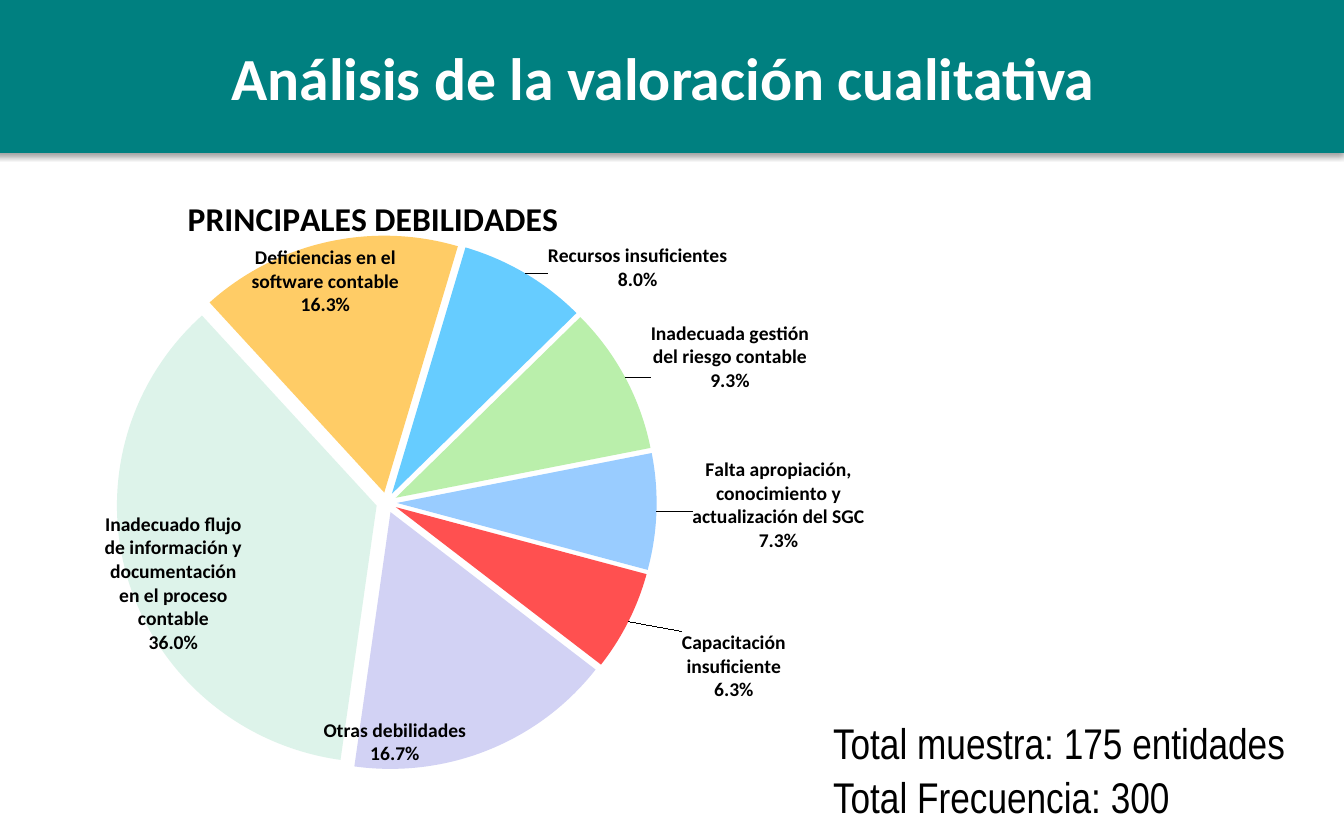
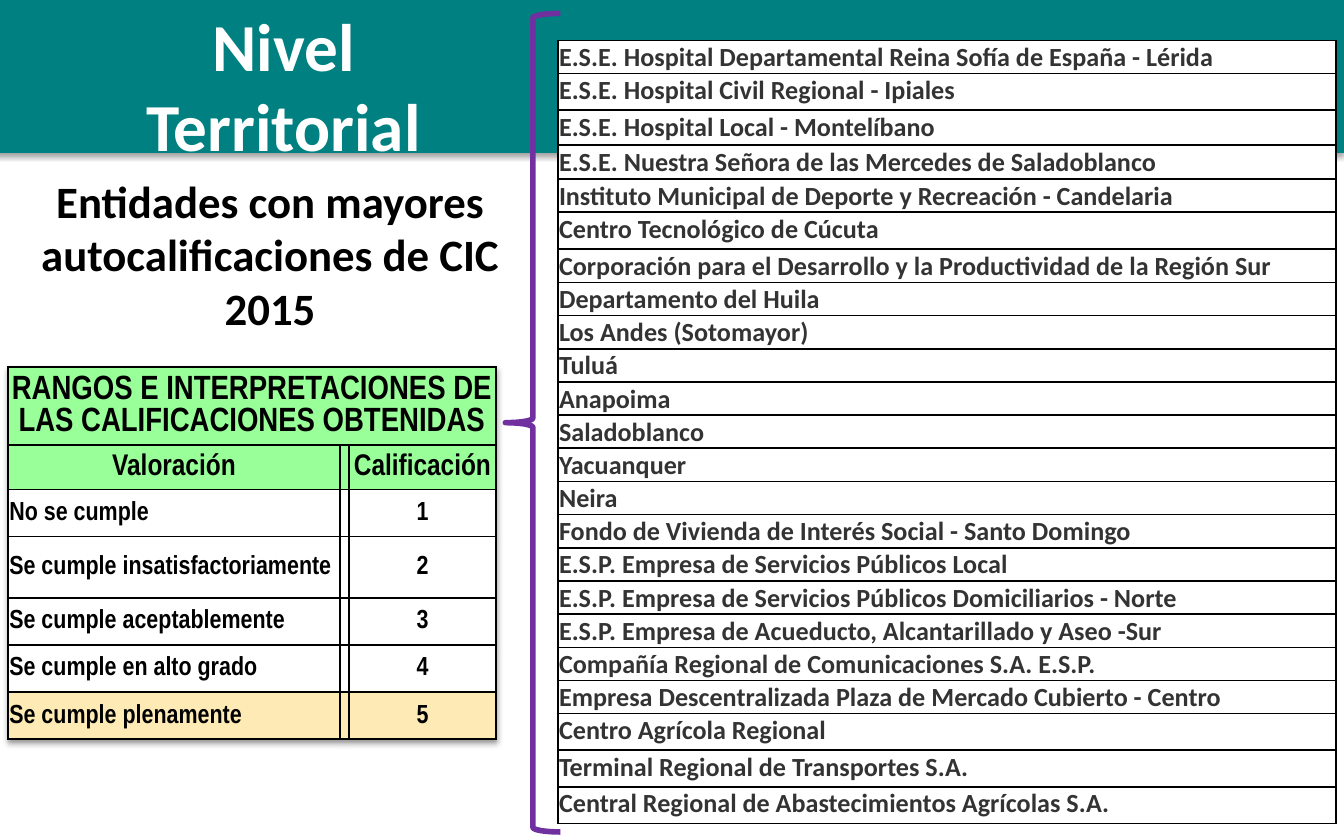
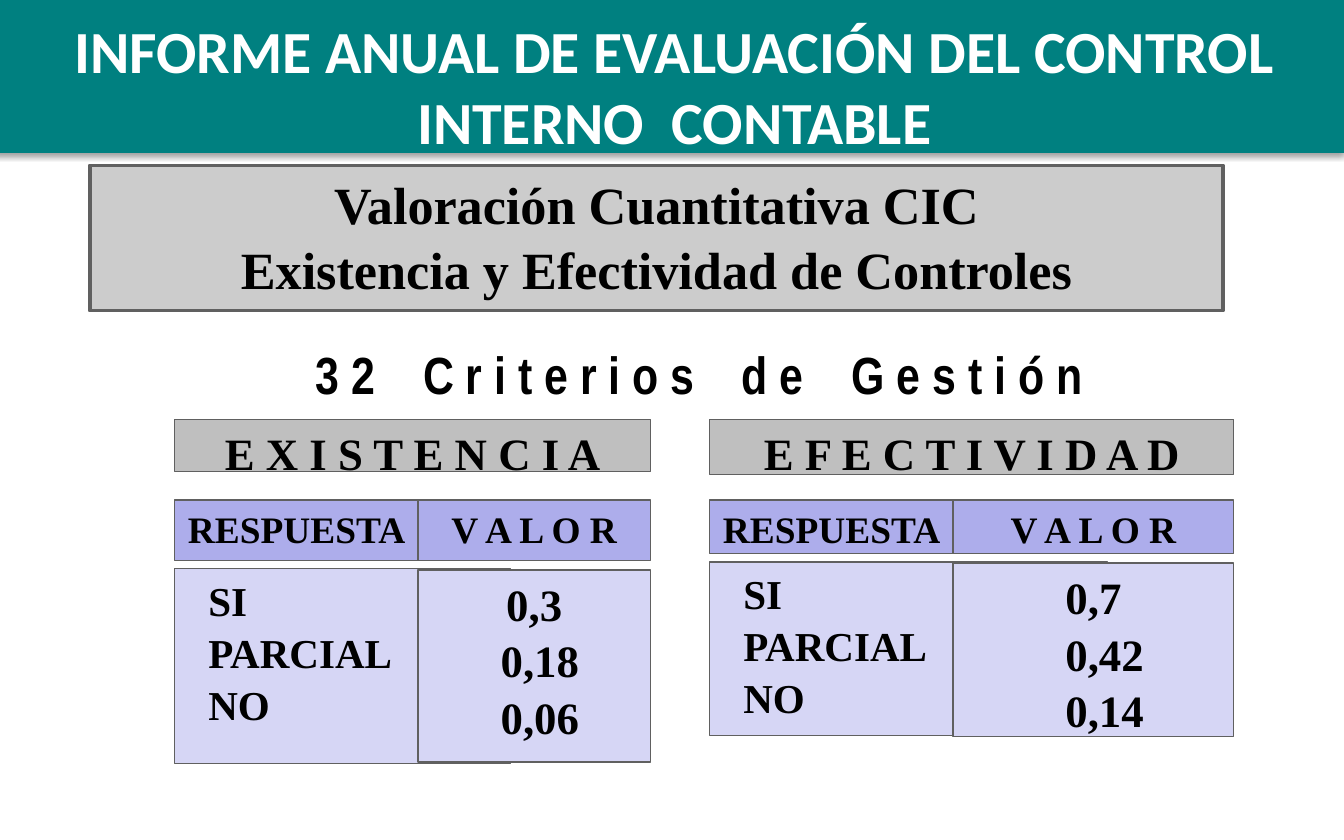
from copy import deepcopy
from dataclasses import dataclass

from pptx import Presentation
from pptx.chart.data import CategoryChartData
from pptx.dml.color import RGBColor
from pptx.enum.chart import XL_CHART_TYPE, XL_LABEL_POSITION
from pptx.enum.shapes import MSO_SHAPE
from pptx.enum.text import MSO_ANCHOR, MSO_AUTO_SIZE, PP_ALIGN
from pptx.oxml import parse_xml
from pptx.oxml.ns import nsdecls, qn
from pptx.util import Pt

LEFT, CENTER, JUSTIFY = PP_ALIGN.LEFT, PP_ALIGN.CENTER, PP_ALIGN.JUSTIFY
TOP, MIDDLE = MSO_ANCHOR.TOP, MSO_ANCHOR.MIDDLE
RECTANGLE, LEFT_BRACE = MSO_SHAPE.RECTANGLE, MSO_SHAPE.LEFT_BRACE
TITLE_ONLY = 5


@dataclass(frozen=True)
class Theme:
    sans: str = "Calibri"
    narrow: str = "Arial Narrow"
    serif: str = "Times New Roman"
    black: str = "000000"
    white: str = "FFFFFF"
    ink: str = "333333"
    band: str = "008080"
    brace: str = "7030A0"
    outline: str = "606060"
    banner: str = "CCCCCC"
    heading: str = "BFBFBF"
    column: str = "ADADEB"
    body: str = "D6D6F5"
    scale_head: str = "99FF99"
    scale_best: str = "FDEAB5"
    title_size: float = 32
    tall_title_size: float = 36
    banner_size: float = 28
    value_size: float = 24
    total_size: float = 23
    answer_size: float = 22
    column_size: float = 20
    caption_size: float = 18
    scale_column_size: float = 16
    cell_size: float = 14
    label_size: float = 10.5


THEME = Theme()

WEAKNESSES = [
    # category, share, slice colour, label shift as a fraction of the chart
    ("Inadecuado flujo de información y documentación en el proceso contable",
     36, "DDF3EA", (0.13, -0.11)),
    ("Deficiencias en el software contable", 16.3, "FFCC66", (0.08, 0.13)),
    ("Recursos insuficientes", 8, "66CCFF", (0.02, 0.04)),
    ("Inadecuada gestión del riesgo contable", 9.3, "BAEFAB", (0.02, 0.03)),
    ("Falta apropiación, conocimiento y actualización del SGC",
     7.3, "99CCFF", (0.03, -0.01)),
    ("Capacitación insuficiente", 6.3, "FF5050", (0.05, 0.01)),
    ("Otras debilidades", 16.7, "D2D2F4", (-0.18, -0.06)),
]

ENTITIES = [
    "E.S.E. Hospital Departamental Reina Sofía de España - Lérida",
    "E.S.E. Hospital Civil Regional - Ipiales",
    "E.S.E. Hospital Local - Montelíbano",
    "E.S.E. Nuestra Señora de las Mercedes de Saladoblanco",
    "Instituto Municipal de Deporte y Recreación - Candelaria",
    "Centro Tecnológico de Cúcuta",
    "Corporación para el Desarrollo y la Productividad de la Región Sur",
    "Departamento del Huila",
    "Los Andes (Sotomayor)",
    "Tuluá",
    "Anapoima",
    "Saladoblanco",
    "Yacuanquer",
    "Neira",
    "Fondo de Vivienda de Interés Social - Santo Domingo",
    "E.S.P. Empresa de Servicios Públicos Local",
    "E.S.P. Empresa de Servicios Públicos Domiciliarios - Norte",
    "E.S.P. Empresa de Acueducto, Alcantarillado y Aseo -Sur",
    "Compañía Regional de Comunicaciones S.A. E.S.P.",
    "Empresa Descentralizada Plaza de Mercado Cubierto - Centro",
    "Centro Agrícola Regional",
    "Terminal Regional de Transportes S.A.",
    "Central Regional de Abastecimientos Agrícolas S.A.",
]
ENTITY_ROW = 17.8
TALL_ENTITY_ROWS = {1: 19.6, 2: 18.8, 3: 18.2, 5: 19.8, 20: 19.6, 21: 19.6, 22: 19.6}

RATINGS = ["No se cumple", "Se cumple insatisfactoriamente", "Se cumple aceptablemente",
           "Se cumple en alto grado", "Se cumple plenamente"]


def color(value):
    return RGBColor.from_string(value)


def shadow_effect():
    return parse_xml(
        f'<a:effectLst {nsdecls("a")}><a:outerShdw blurRad="{Pt(3.1)}" dist="{Pt(1.6)}" '
        f'dir="5400000" algn="t" rotWithShape="0"><a:srgbClr val="{THEME.black}">'
        '<a:alpha val="38000"/></a:srgbClr></a:outerShdw></a:effectLst>')


def style_font(font, size, name, ink=THEME.black, bold=True):
    font.size, font.name, font.bold = Pt(size), name, bold
    font.color.rgb = color(ink)


def write(frame, lines, size, name, ink=THEME.black, bold=True, align=LEFT, later_indent=0):
    """Fill a text frame; later_indent shifts every line after the first."""
    frame.word_wrap = True
    for index, line in enumerate(lines):
        paragraph = frame.paragraphs[0] if index == 0 else frame.add_paragraph()
        paragraph.alignment = align
        if index and name != THEME.sans:
            paragraph.space_before = Pt(1.5)
        if index and later_indent:
            paragraph._p.get_or_add_pPr().set("marL", str(Pt(later_indent)))
        run = paragraph.add_run()
        run.text = line
        style_font(run.font, size, name, ink, bold)


def add_shape(slide, kind, box, fill=None, line=None, line_width=0.75):
    shape = slide.shapes.add_shape(kind, *map(Pt, box))
    shape.shadow.inherit = False
    if fill:
        shape.fill.solid()
        shape.fill.fore_color.rgb = color(fill)
    else:
        shape.fill.background()
    if line:
        shape.line.color.rgb = color(line)
        shape.line.width = Pt(line_width)
    else:
        shape.line.fill.background()
    return shape


def add_panel(slide, box, fill, lines, size, align=CENTER, line_width=0.75,
              margin=7.2, later_indent=0):
    panel = add_shape(slide, RECTANGLE, box, fill, THEME.outline, line_width)
    frame = panel.text_frame
    frame.vertical_anchor = TOP
    frame.margin_left = Pt(margin)
    write(frame, lines, size, THEME.serif, align=align, later_indent=later_indent)


def add_text(slide, box, lines, size, name, **style):
    frame = slide.shapes.add_textbox(*map(Pt, box)).text_frame
    write(frame, lines, size, name, **style)


def add_titled_slide(presentation, box, lines, size=THEME.title_size):
    slide = presentation.slides.add_slide(presentation.slide_layouts[TITLE_ONLY])
    title = slide.shapes.title
    title.left, title.top, title.width, title.height = map(Pt, box)
    frame = title.text_frame
    frame.auto_size = MSO_AUTO_SIZE.NONE
    frame.vertical_anchor = TOP
    write(frame, lines, size, THEME.sans, THEME.white, align=CENTER)
    return slide


def add_band_to_layout(slide):
    """Draw the title band once, behind every slide that shares the layout."""
    band = add_shape(slide, RECTANGLE, (-3, -1.5, 723, 83.5), THEME.band)
    properties = band._element.spPr
    properties.remove(properties.find(qn("a:effectLst")))
    properties.append(shadow_effect())
    slide.slide_layout.shapes._spTree.insert(2, band._element)


def manual_layout(x, y, size=None, edge=True):
    modes = '<c:xMode val="edge"/><c:yMode val="edge"/>' if edge else ""
    extent = f'<c:w val="{size[0]}"/><c:h val="{size[1]}"/>' if size else ""
    target = '<c:layoutTarget val="inner"/>' if size else ""
    return parse_xml(f'<c:layout {nsdecls("c")}><c:manualLayout>{target}{modes}'
                     f'<c:x val="{x}"/><c:y val="{y}"/>{extent}</c:manualLayout></c:layout>')


def replace_layout(parent, position, layout):
    for old in parent.findall(qn("c:layout")):
        parent.remove(old)
    parent.insert(position, layout)


def chart_value(tag, value):
    return parse_xml(f'<c:{tag} {nsdecls("c")} val="{value}"/>')


def place_labels(series):
    """Show category and percentage, and shift each label from its slice's edge."""
    labels = series.data_labels
    labels.number_format = "0.0%"
    labels.number_format_is_linked = False
    labels.show_value = False
    labels.show_category_name = labels.show_percentage = True
    labels.position = XL_LABEL_POSITION.OUTSIDE_END
    style_font(labels.font, THEME.label_size, THEME.sans)
    element = labels._element
    for old in element.findall(qn("c:showLeaderLines")):
        element.remove(old)
    element.append(parse_xml(f'<c:separator {nsdecls("c")}>\n</c:separator>'))
    shared = list(element)
    for index, (_, _, _, shift) in enumerate(WEAKNESSES):
        label = parse_xml(f'<c:dLbl {nsdecls("c")}><c:idx val="{index}"/></c:dLbl>')
        label.append(manual_layout(*shift, edge=False))
        label.extend(deepcopy(part) for part in shared)
        element.insert(index, label)
    element.append(chart_value("showLeaderLines", 1))


def add_weakness_pie(slide, box):
    data = CategoryChartData()
    data.categories = [row[0] for row in WEAKNESSES]
    data.add_series("Series 1", [row[1] for row in WEAKNESSES])
    chart = slide.shapes.add_chart(XL_CHART_TYPE.PIE, *map(Pt, box), data).chart
    style_font(chart.font, 10, THEME.sans, bold=False)
    chart.has_legend = False
    chart.has_title = True
    write(chart.chart_title.text_frame, ["PRINCIPALES DEBILIDADES"],
          THEME.caption_size, THEME.sans)
    replace_layout(chart.chart_title._element, 1, manual_layout(0.25, 0.03))

    plot = chart.plots[0]
    plot.vary_by_categories = True
    series = plot.series[0]
    for index, (_, _, fill, _) in enumerate(WEAKNESSES):
        slice_format = series.points[index].format
        slice_format.fill.solid()
        slice_format.fill.fore_color.rgb = color(fill)
    series._element.find(qn("c:dPt")).addprevious(chart_value("explosion", 4))
    place_labels(series)

    pie = plot._element
    for old in pie.findall(qn("c:firstSliceAng")):
        pie.remove(old)
    pie.append(chart_value("firstSliceAng", 188))
    replace_layout(pie.getparent(), 0, manual_layout(0.18, 0.1, (0.58, 0.84)))


def add_grid(slide, box, widths, heights):
    table = slide.shapes.add_table(len(heights), len(widths), *map(Pt, box)).table
    table.first_row = table.horz_banding = False
    for column, width in zip(table.columns, widths):
        column.width = Pt(width)
    for row, height in zip(table.rows, heights):
        row.height = Pt(height)
    return table


def format_cell(cell, fill, anchor=MIDDLE):
    cell.margin_left = cell.margin_right = cell.margin_top = Pt(0.7)
    cell.margin_bottom = 0
    cell.vertical_anchor = anchor
    cell.fill.solid()
    cell.fill.fore_color.rgb = color(fill)
    properties = cell._tc.get_or_add_tcPr()
    for index, side in enumerate("LRTB"):
        properties.insert(index, parse_xml(
            f'<a:ln{side} {nsdecls("a")} w="{Pt(1)}"><a:solidFill>'
            f'<a:srgbClr val="{THEME.black}"/></a:solidFill></a:ln{side}>'))


def add_entity_list(slide):
    heights = [TALL_ENTITY_ROWS.get(index, ENTITY_ROW) for index in range(len(ENTITIES))]
    table = add_grid(slide, (298.8, 21.6, 416.9, sum(heights)), [416.9], heights)
    for index, entity in enumerate(ENTITIES):
        cell = table.cell(index, 0)
        format_cell(cell, THEME.white, TOP)
        write(cell.text_frame, [entity], THEME.cell_size, THEME.sans, THEME.ink)


def add_rating_scale(slide):
    widths = [177.8, 5, 78.5]
    heights = [41.8, 23.8, 25.2, 33, 25.2, 25.2, 25.2]
    table = add_grid(slide, (4.3, 196.6, sum(widths), sum(heights)), widths, heights)
    table._tbl.tblPr.insert(0, shadow_effect())
    rows = [("RANGOS E INTERPRETACIONES DE LAS CALIFICACIONES OBTENIDAS", ""),
            ("Valoración", "Calificación")]
    rows += [(rating, str(score)) for score, rating in enumerate(RATINGS, 1)]
    sizes = [THEME.caption_size, THEME.scale_column_size] + [THEME.cell_size] * len(RATINGS)
    fills = [THEME.scale_head] * 2 + [THEME.white] * 4 + [THEME.scale_best]
    for index, (texts, size, fill) in enumerate(zip(rows, sizes, fills)):
        for column in range(len(widths)):
            format_cell(table.cell(index, column), fill)
        for column, text in zip((0, 2), texts):
            if text:
                align = JUSTIFY if index > 1 and column == 0 else CENTER
                if text == RATINGS[1]:
                    align = LEFT
                write(table.cell(index, column).text_frame, [text], size,
                      THEME.narrow, align=align)
    table.cell(0, 0).merge(table.cell(0, 2))


def add_control_scores(slide, left, split, right, heading, heading_height, column_height,
                       answer_box, score_box, scores, score_indent):
    """Draw one criterion; answer_box and score_box are (top, right or height) details."""
    answer_right, answer_top, answer_height = answer_box
    score_top, score_height = score_box
    score_width = right - split
    add_panel(slide, (left, 224.6, right - left, heading_height), THEME.heading,
              [heading], THEME.value_size)
    add_panel(slide, (left, 267.8, answer_right - left, column_height), THEME.column,
              ["RESPUESTA"], THEME.column_size, LEFT)
    add_panel(slide, (split, 267.8, score_width, column_height), THEME.column,
              ["V A L O R"], THEME.column_size)
    add_panel(slide, (left, answer_top, answer_right - left, answer_height), THEME.body,
              ["SI", "PARCIAL", "NO"], THEME.answer_size, LEFT, margin=18)
    add_panel(slide, (split, score_top, score_width, score_height), THEME.body,
              scores, THEME.value_size, later_indent=score_indent)


def build_weaknesses(presentation):
    slide = add_titled_slide(presentation, (105, 18, 501, 45.4),
                             ["Análisis de la valoración cualitativa"])
    add_band_to_layout(slide)
    add_weakness_pie(slide, (-27.4, 87.8, 499, 345.6))
    add_text(slide, (439.2, 380.2, 271.4, 63.4),
             ["Total muestra: 175 entidades", "Total Frecuencia: 300"],
             THEME.total_size, THEME.narrow, bold=False)


def build_territorial_level(presentation):
    slide = add_titled_slide(presentation, (70.6, -1.4, 162.7, 94.3),
                             ["Nivel", "Territorial"], THEME.tall_title_size)
    add_entity_list(slide)
    add_rating_scale(slide)
    add_shape(slide, LEFT_BRACE, (270.7, 7.2, 29.5, 438.5), line=THEME.brace, line_width=3)
    add_text(slide, (4.3, 89.3, 280.8, 68.4),
             ["Entidades con mayores autocalificaciones de CIC 2015"],
             THEME.value_size, THEME.sans, align=CENTER)


def build_quantitative_scores(presentation):
    slide = add_titled_slide(presentation, (11.5, 3.6, 699.8, 70.6),
                             ["INFORME ANUAL DE EVALUACIÓN DEL CONTROL INTERNO  CONTABLE"])
    add_panel(slide, (48.2, 88.6, 607, 77.8), THEME.banner,
              ["Valoración Cuantitativa CIC", "Existencia y Efectividad de Controles"],
              THEME.banner_size, line_width=2)
    add_text(slide, (93.6, 180, 561.6, 41), ["3 2    C r i t e r i o s    d e    G e s t i ó n"],
             THEME.banner_size, THEME.narrow, align=CENTER)
    add_control_scores(slide, 93.6, 223.9, 348.5, "E X I S T E N C I A", 28.1, 32.4,
                       (273.6, 304.6, 104.4), (305.3, 103), ["0,3", "0,18", "0,06"], 6)
    add_control_scores(slide, 380.2, 510.5, 661, "E F E C T I V I D A D", 29.5, 28.8,
                       (593.3, 301, 92.9), (301.7, 92.9), ["0,7", "0,42", "0,14"], 12)


def main():
    presentation = Presentation()
    presentation.slide_width, presentation.slide_height = Pt(720), Pt(450)
    build_weaknesses(presentation)
    build_territorial_level(presentation)
    build_quantitative_scores(presentation)
    presentation.save("out.pptx")


if __name__ == "__main__":
    main()
